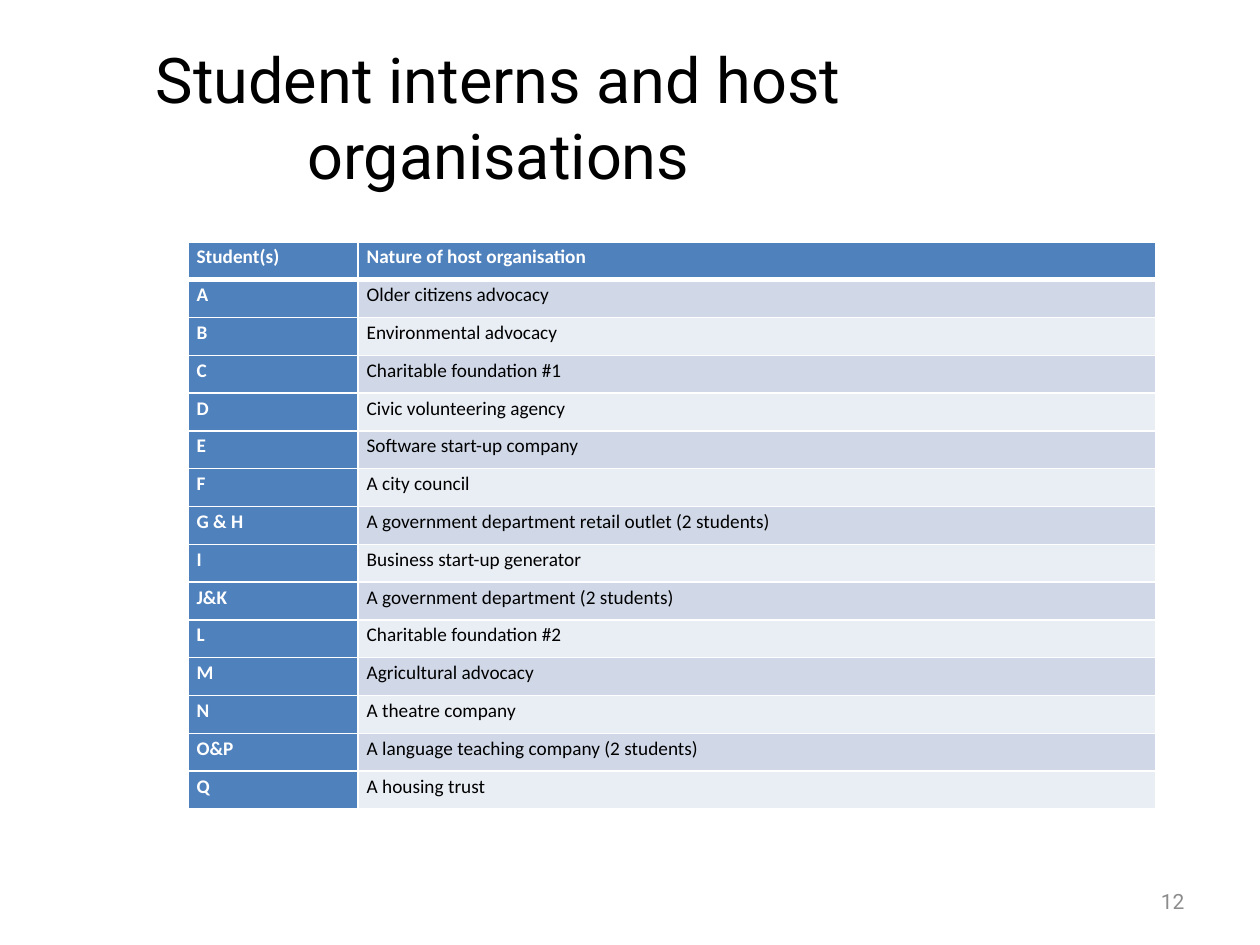
from lxml.etree import SubElement
from pptx import Presentation
from pptx.dml.color import RGBColor
from pptx.enum.text import MSO_ANCHOR, PP_ALIGN
from pptx.oxml.ns import qn
from pptx.util import Inches, Pt

BLACK = RGBColor(0x00, 0x00, 0x00)
WHITE = RGBColor(0xFF, 0xFF, 0xFF)
GREY = RGBColor(0x8C, 0x8C, 0x8C)
BLUE = RGBColor(0x4F, 0x81, 0xBD)
BANDS = (RGBColor(0xD0, 0xD8, 0xE8), RGBColor(0xE9, 0xED, 0xF4))

COLUMN_WIDTHS = (1.35, 6.33)
ROW_HEIGHT = 0.3
ROWS = [
    ("Student(s)", "Nature of host organisation"),
    ("A", "Older citizens advocacy"),
    ("B", "Environmental advocacy"),
    ("C", "Charitable foundation #1"),
    ("D", "Civic volunteering agency"),
    ("E", "Software start-up company"),
    ("F", "A city council"),
    ("G & H", "A government department retail outlet (2 students)"),
    ("I", "Business start-up generator"),
    ("J&K", "A government department (2 students)"),
    ("L", "Charitable foundation #2"),
    ("M", "Agricultural advocacy"),
    ("N", "A theatre company"),
    ("O&P", "A language teaching company (2 students)"),
    ("Q", "A housing trust"),
]


def set_font(p, name, size, color, bold=False):
    p.font.name = name
    p.font.size = Pt(size)
    p.font.color.rgb = color
    p.font.bold = bold


def add_text(s, text, left, top, width, height, size, color, align):
    box = s.shapes.add_textbox(Inches(left), Inches(top), Inches(width), Inches(height))
    tf = box.text_frame
    tf.word_wrap = True
    tf.vertical_anchor = MSO_ANCHOR.MIDDLE
    p = tf.paragraphs[0]
    p.text = text
    p.alignment = align
    set_font(p, "Roboto", size, color)


def set_borders(cell, top, bottom):
    """Draw white borders; top and bottom are widths in points."""
    tc_pr = cell._tc.get_or_add_tcPr()
    for side, width in (("L", 1), ("R", 1), ("T", top), ("B", bottom)):
        ln = SubElement(tc_pr, qn(f"a:ln{side}"), w=str(Pt(width)))
        fill = SubElement(ln, qn("a:solidFill"))
        SubElement(fill, qn("a:srgbClr"), val=str(WHITE))


def fill_cell(cell, text, row, col):
    heading = row == 0 or col == 0
    set_borders(cell, top=3 if row == 1 else 1, bottom=3 if row == 0 else 1)
    cell.fill.solid()
    cell.fill.fore_color.rgb = BLUE if heading else BANDS[(row - 1) % 2]
    cell.margin_left = cell.margin_right = Inches(0.07)
    cell.margin_top = cell.margin_bottom = 0
    p = cell.text_frame.paragraphs[0]
    p.text = text
    p.line_spacing = 1.15
    set_font(p, "Calibri", 11, WHITE if heading else BLACK, heading)


def add_host_table(s, left, top):
    table = s.shapes.add_table(
        len(ROWS), len(COLUMN_WIDTHS), Inches(left), Inches(top),
        Inches(sum(COLUMN_WIDTHS)), Inches(ROW_HEIGHT * len(ROWS))).table
    table.first_col = True
    for column, width in zip(table.columns, COLUMN_WIDTHS):
        column.width = Inches(width)
    for row, texts in enumerate(ROWS):
        table.rows[row].height = Inches(ROW_HEIGHT)
        for col, text in enumerate(texts):
            fill_cell(table.cell(row, col), text, row, col)


def main():
    prs = Presentation()
    prs.slide_width, prs.slide_height = Inches(10), Inches(7.5)
    s = prs.slides.add_slide(prs.slide_layouts[6])
    add_text(s, "Student interns and host organisations",
             0.5, 0.3, 6.91, 1.25, 36, BLACK, PP_ALIGN.CENTER)
    add_host_table(s, 1.49, 1.92)
    add_text(s, "12", 7.17, 6.95, 2.33, 0.4, 12, GREY, PP_ALIGN.RIGHT)
    prs.save("out.pptx")


if __name__ == "__main__":
    main()
